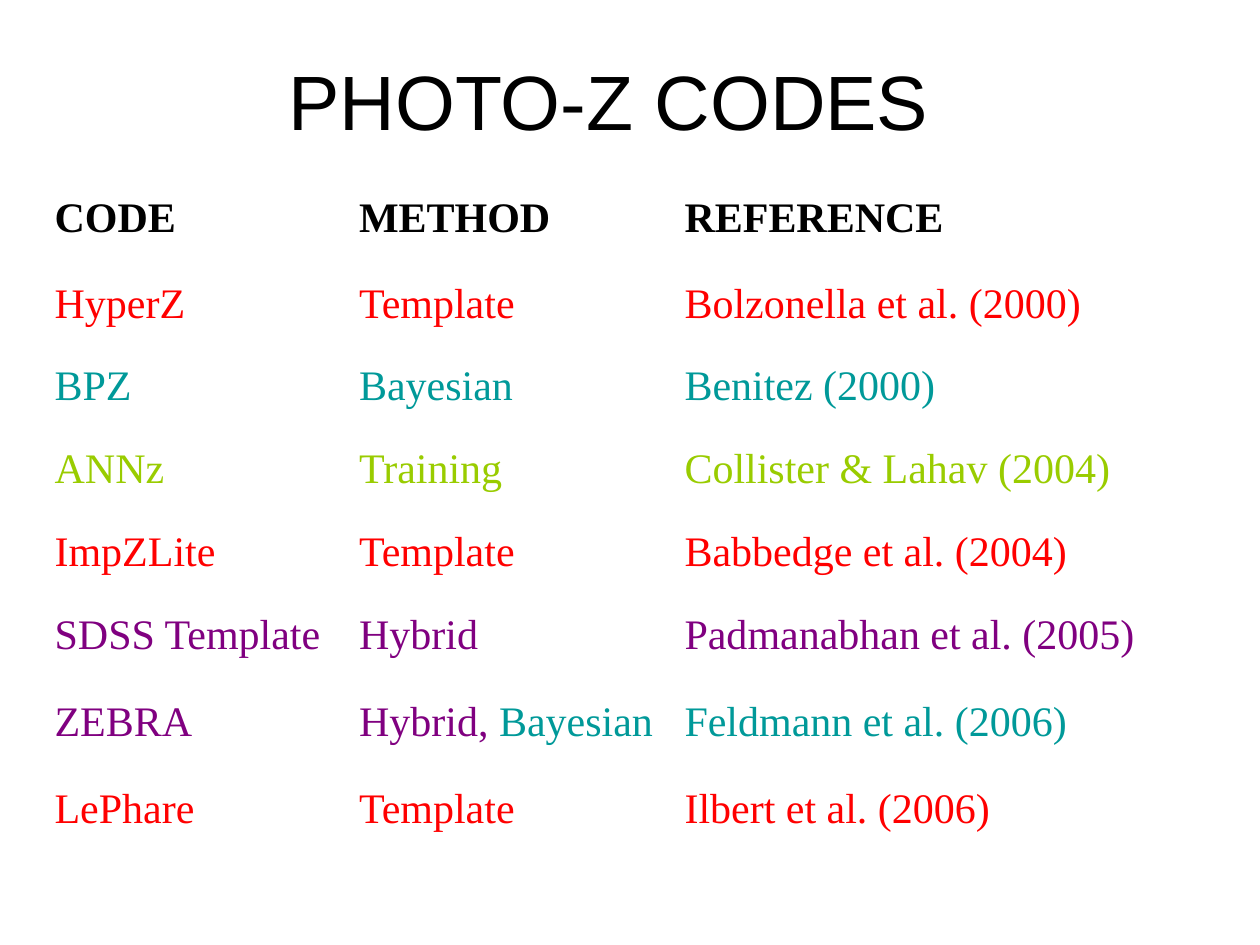
import pptx
import pptx.dml.color
import pptx.enum.text
import pptx.util
from dataclasses import dataclass

Pt = pptx.util.Pt


@dataclass(frozen=True)
class Theme:
    head: str = "Arial"
    body: str = "Times New Roman"
    big: int = 44
    text: int = 24
    black: str = "000000"
    red: str = "FF0000"
    teal: str = "009999"
    lime: str = "99CC00"
    plum: str = "800080"


class Deck:
    def __init__(self, theme):
        self.theme = theme
        self.file = pptx.Presentation()
        self.file.slide_width, self.file.slide_height = Pt(720), Pt(540)
        self.slide = self.file.slides.add_slide(self.file.slide_layouts[5])

    def font(self, font, name, size, color, bold=False):
        font.name, font.size, font.bold = name, Pt(size), bold
        self.tint(font, color)

    def tint(self, font, color):
        font.color.rgb = pptx.dml.color.RGBColor.from_string(color)

    def title(self, text, left, top, width, height):
        shape = self.slide.shapes.title
        shape.left, shape.top = Pt(left), Pt(top)
        shape.width, shape.height = Pt(width), Pt(height)
        frame = shape.text_frame
        frame.text = text
        frame.vertical_anchor = pptx.enum.text.MSO_ANCHOR.MIDDLE
        line = frame.paragraphs[0]
        line.alignment = pptx.enum.text.PP_ALIGN.CENTER
        self.font(line.font, self.theme.head, self.theme.big, self.theme.black)

    def cell(self, cell, text, color, bold):
        """Fill a cell; text is a string or a list of (string, color) runs."""
        cell.fill.background()
        line = cell.text_frame.paragraphs[0]
        if isinstance(text, str):
            line.text = text
            self.font(line.font, self.theme.body, self.theme.text, color, bold)
            return
        for part, shade in text:
            run = line.add_run()
            run.text = part
            self.font(run.font, self.theme.body, self.theme.text, shade, bold)

    def table(self, rows, left, top, widths, heights):
        """Each row is its color followed by its cells; the first is the header."""
        table = self.slide.shapes.add_table(
            len(rows), len(widths), Pt(left), Pt(top),
            Pt(sum(widths)), Pt(sum(heights))).table
        table.first_row = table.horz_banding = False
        for col, width in zip(table.columns, widths):
            col.width = Pt(width)
        for i, (color, *texts) in enumerate(rows):
            table.rows[i].height = Pt(heights[i])
            for j, text in enumerate(texts):
                # A (text, color) pair overrides the row color.
                if isinstance(text, tuple):
                    text, shade = text
                else:
                    shade = color
                self.cell(table.cell(i, j), text, shade, i == 0)


def main():
    theme = Theme()
    deck = Deck(theme)
    deck.title("PHOTO-Z CODES", 42, 18, 612, 78)
    codes = [
        (theme.black, "CODE", "METHOD", "REFERENCE"),
        (theme.red, "HyperZ", "Template", "Bolzonella et al. (2000)"),
        (theme.teal, "BPZ", "Bayesian", "Benitez (2000)"),
        (theme.lime, "ANNz", "Training", "Collister & Lahav (2004)"),
        (theme.red, "ImpZLite", "Template", "Babbedge et al. (2004)"),
        (theme.plum, "SDSS Template", "Hybrid", "Padmanabhan et al. (2005)"),
        (theme.plum, "ZEBRA",
         [("Hybrid, ", theme.plum), ("Bayesian", theme.teal)],
         ("Feldmann et al. (2006)", theme.teal)),
        (theme.red, "LePhare", "Template", "Ilbert et al. (2006)"),
    ]
    deck.table(codes, 24, 108, [174, 186, 282],
               [49, 47, 47.5, 47.5, 47.5, 49.5, 49.5, 47.5])
    deck.file.save("out.pptx")


if __name__ == "__main__":
    main()
